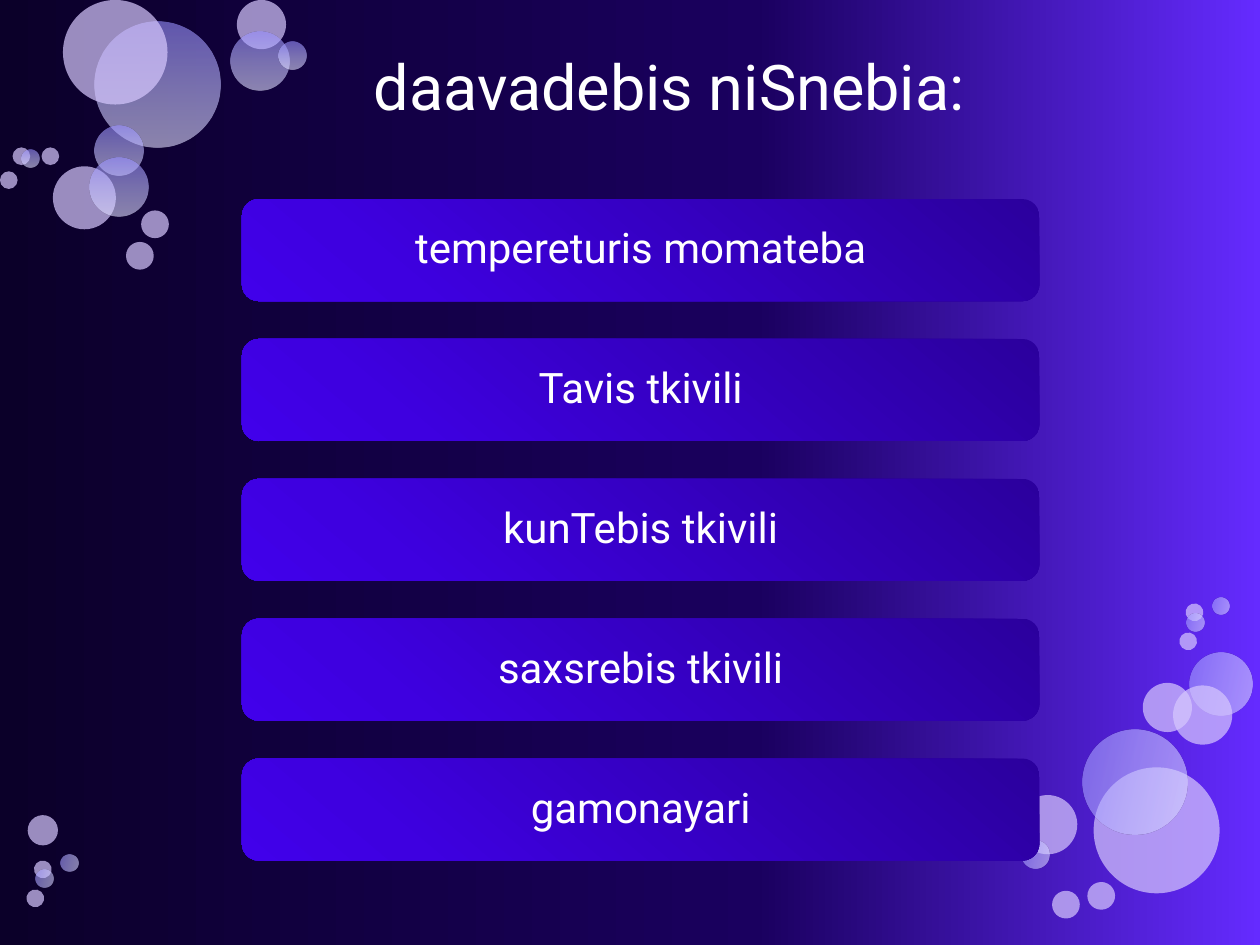
from collections import namedtuple

from lxml.etree import SubElement
from pptx import Presentation
from pptx.dml.color import RGBColor
from pptx.enum.shapes import MSO_SHAPE
from pptx.enum.text import MSO_ANCHOR, MSO_AUTO_SIZE, PP_ALIGN
from pptx.oxml.ns import qn
from pptx.util import Inches, Pt

Box = namedtuple("Box", "left top width height")
Bubble = namedtuple("Bubble", "left top size shaded")

WIDTH, HEIGHT = Inches(10), Inches(7.5)
COLUMNS, ROWS = 100, 75
FONT = "Roboto"
WHITE = "FFFFFF"
PALE = "D7C8FE"
BACKGROUND_STOPS = [(0, "0B0029"), (60, "1A005F"), (100, "652BFF")]
BUBBLE_STOPS = [(0, "9890FF"), (50, "BFBBFF"), (100, "E0DEFF")]
BAR_STOPS = [(0, "2B009D"), (80, "3E00E0"), (100, "4100EA")]

TITLE = "daavadebis niSnebia: "
SYMPTOMS = [
    "tempereturis momateba",
    "Tavis tkivili",
    "kunTebis tkivili",
    "saxsrebis tkivili",
    "gamonayari",
]
TOP_LEFT = [
    Bubble(7.5, 1.7, 10, True),
    Bubble(4.2, 13.2, 5, False),
    Bubble(7.5, 10, 3.9, True),
    Bubble(7.1, 12.5, 4.7, True),
    Bubble(5, 0, 8.3, False),
    Bubble(18.8, 0, 3.9, False),
    Bubble(18.3, 2.5, 4.7, True),
    Bubble(22.1, 3.3, 2.2, True),
    Bubble(11.2, 16.7, 2.2, False),
    Bubble(1, 11.7, 1.4, False),
    Bubble(10, 19.2, 2.2, False),
    Bubble(0, 13.6, 1.4, False),
    Bubble(1.7, 11.9, 1.4, True),
    Bubble(3.3, 11.7, 1.4, False),
]
BOTTOM_RIGHT = [
    Bubble(6, 13.5, 10, False),
    Bubble(13.6, 4.4, 5, True),
    Bubble(9.9, 6.8, 3.9, False),
    Bubble(12.3, 7, 4.7, False),
    Bubble(5.1, 10.5, 8.3, True),
    Bubble(0, 15.7, 4.7, False),
    Bubble(0.3, 19.3, 2.2, True),
    Bubble(2.7, 23.3, 2.2, False),
    Bubble(13.3, 0.5, 1.4, False),
    Bubble(5.5, 22.6, 2.2, False),
    Bubble(15.4, 0, 1.4, True),
    Bubble(13.4, 1.3, 1.4, True),
    Bubble(12.8, 2.8, 1.4, False),
]
BOTTOM_LEFT = [
    Bubble(0.1, 0, 2.4, False),
    Bubble(0.6, 3.6, 1.4, False),
    Bubble(2.7, 3.1, 1.4, True),
    Bubble(0.7, 4.3, 1.4, True),
    Bubble(0, 5.9, 1.4, False),
]


def color(value):
    """Turn a hex string into a colour."""
    return RGBColor.from_string(value)


def place(box):
    """Turn a box in grid cells into slide lengths."""
    column, row = WIDTH / COLUMNS, HEIGHT / ROWS
    return [
        round(cells * unit)
        for cells, unit in zip(box, (column, row, column, row))
    ]


def set_opacity(element, percent):
    """Make every RGB colour below the element translucent."""
    for rgb in element.iter(qn("a:srgbClr")):
        SubElement(rgb, qn("a:alpha"), val=str(percent * 1000))


def set_gradient(fill, element, stops, clockwise):
    """Give the fill owned by the element a linear gradient."""
    fill.gradient()
    fill.gradient_angle = (360 - clockwise) % 360
    stop_list = next(element.iter(qn("a:gsLst")))
    for old_stop in list(stop_list):
        stop_list.remove(old_stop)
    for position, value in stops:
        stop = SubElement(stop_list, qn("a:gs"), pos=str(position * 1000))
        SubElement(stop, qn("a:srgbClr"), val=value)


def format_text(text_frame, text, size, anchor):
    """Write one centred white paragraph."""
    text_frame.text = text
    text_frame.word_wrap = True
    text_frame.vertical_anchor = anchor
    paragraph = text_frame.paragraphs[0]
    paragraph.alignment = PP_ALIGN.CENTER
    font = paragraph.runs[0].font
    font.name, font.size = FONT, Pt(size)
    font.color.rgb = color(WHITE)
    return paragraph


def add_plain_shape(shapes, kind, box):
    """Add a preset shape without line or shadow."""
    shape = shapes.add_shape(kind, *place(box))
    shape.shadow.inherit = False
    shape.line.fill.background()
    return shape


def add_bubbles(slide, box, bubbles, mirrored=False):
    """Scatter translucent circles from the corner of the box."""
    for bubble in bubbles:
        circle = Box(
            box.left + bubble.left, box.top + bubble.top, bubble.size, bubble.size
        )
        shape = add_plain_shape(slide.shapes, MSO_SHAPE.OVAL, circle)
        properties = shape._element.spPr
        if bubble.shaded:
            set_gradient(shape.fill, properties, BUBBLE_STOPS, 90)
        else:
            shape.fill.solid()
            shape.fill.fore_color.rgb = color(PALE)
        set_opacity(properties, 60 if bubble.shaded else 70)
        if mirrored:
            shape.rotation = 103.3
            properties.xfrm.set("flipV", "1")


def add_title(slide, box, text):
    """Move and fill the title placeholder."""
    title = slide.shapes.title
    title.left, title.top, title.width, title.height = place(box)
    format_text(title.text_frame, text, 36, MSO_ANCHOR.TOP)
    title.text_frame.auto_size = MSO_AUTO_SIZE.SHAPE_TO_FIT_TEXT


def add_bar(slide, box, text):
    """Add a rounded bar grouped with its inset label."""
    group = slide.shapes.add_group_shape()
    bar = add_plain_shape(group.shapes, MSO_SHAPE.ROUNDED_RECTANGLE, box)
    set_gradient(bar.fill, bar._element.spPr, BAR_STOPS, 130)
    inset = 0.4
    inner = Box(
        box.left + inset, box.top + inset,
        box.width - 2 * inset, box.height - 2 * inset,
    )
    label = group.shapes.add_textbox(*place(inner))
    frame = label.text_frame
    frame.margin_left = frame.margin_right = Inches(0.1)
    frame.margin_top = frame.margin_bottom = Inches(0.1)
    paragraph = format_text(frame, text, 24, MSO_ANCHOR.MIDDLE)
    paragraph.line_spacing = 0.9


def add_bar_list(slide, box, texts):
    """Stack bars at an even pitch to fill the box."""
    bar_height = 8.1
    pitch = (box.height - bar_height) / (len(texts) - 1)
    for index, text in enumerate(texts):
        bar = Box(box.left, box.top + index * pitch, box.width, bar_height)
        add_bar(slide, bar, text)


def main():
    """Build and save the slide."""
    presentation = Presentation()
    presentation.slide_width, presentation.slide_height = WIDTH, HEIGHT
    slide = presentation.slides.add_slide(presentation.slide_layouts[5])
    set_gradient(slide.background.fill, slide._element, BACKGROUND_STOPS, 0)
    add_bubbles(slide, Box(0, 0, 24.3, 21.4), TOP_LEFT)
    add_bubbles(slide, Box(80.8, 47.4, 18.6, 25.5), BOTTOM_RIGHT, mirrored=True)
    add_bubbles(slide, Box(2.1, 64.7, 4.1, 7.3), BOTTOM_LEFT, mirrored=True)
    add_title(slide, Box(25, 3.3, 57.5, 7.1), TITLE)
    add_bar_list(slide, Box(19.2, 15.8, 63.3, 52.5), SYMPTOMS)
    presentation.save("out.pptx")


if __name__ == "__main__":
    main()
